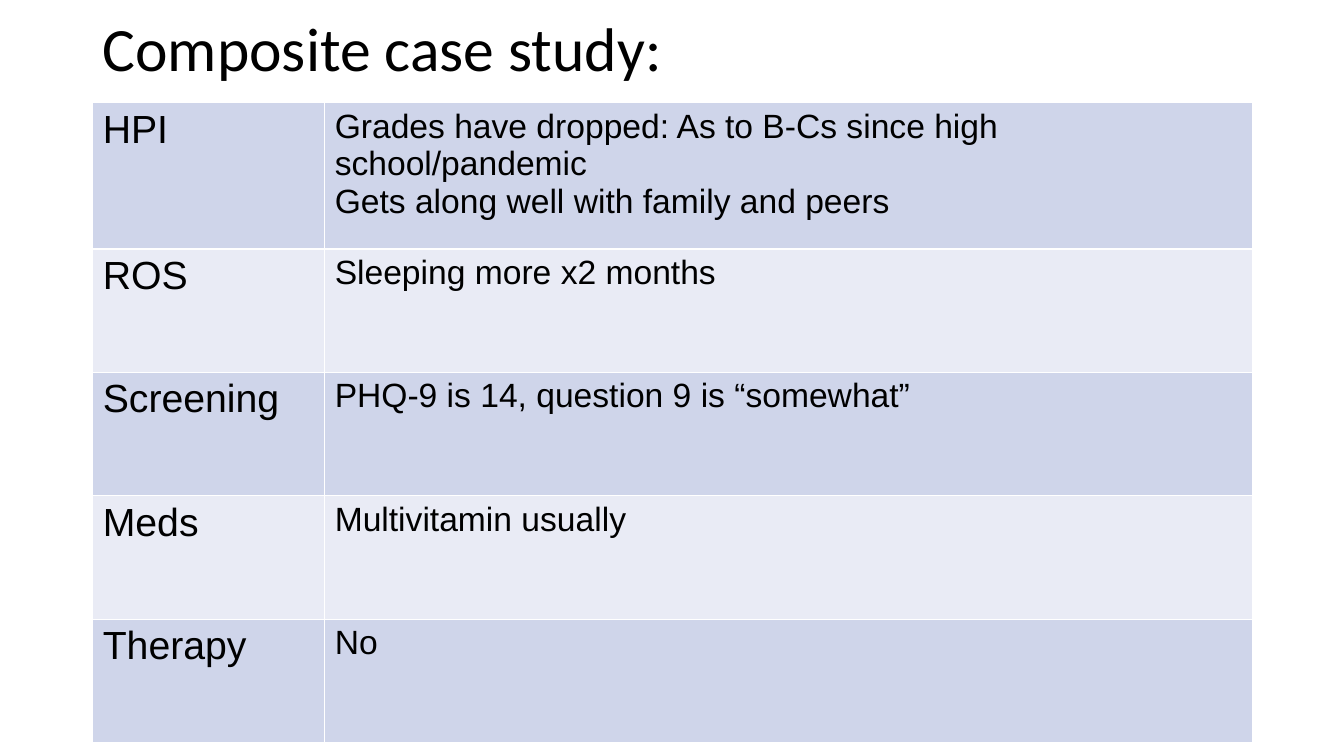
import pptx
import pptx.util
import pptx.dml.color
import pptx.enum.text
import pptx.oxml
import pptx.oxml.ns
from dataclasses import dataclass

Inches = pptx.util.Inches
Pt = pptx.util.Pt


@dataclass(frozen=True)
class Theme:
    text: str = "000000"
    bands: tuple = ("CFD5EA", "E9EBF5")
    border: str = "FFFFFF"
    border_pt: float = 1
    title_font: str = "Calibri"
    body_font: str = "Arial"
    title_size: float = 44
    label_size: float = 28
    detail_size: float = 24


THEME = Theme()
TITLE = "Composite case study:"
CASE = [
    ("HPI", ["Grades have dropped: As to B-Cs since high school/pandemic",
             "Gets along well with family and peers"]),
    ("ROS", ["Sleeping more x2 months"]),
    ("Screening", ["PHQ-9 is 14, question 9 is “somewhat”"]),
    ("Meds", ["Multivitamin usually"]),
    ("Therapy", ["No"]),
]


def rgb(value):
    return pptx.dml.color.RGBColor.from_string(value)


def add_run(p, text, font, size):
    r = p.add_run()
    r.text = text
    r.font.name = font
    r.font.size = Pt(size)
    r.font.bold = False
    r.font.color.rgb = rgb(THEME.text)


def set_borders(cell):
    tc_pr = cell._tc.get_or_add_tcPr()
    # Borders come before the fill in the cell properties
    for i, side in enumerate(("lnL", "lnR", "lnT", "lnB")):
        tc_pr.insert(i, pptx.oxml.parse_xml(
            f'<a:{side} {pptx.oxml.ns.nsdecls("a")} w="{Pt(THEME.border_pt)}">'
            f'<a:solidFill><a:srgbClr val="{THEME.border}"/></a:solidFill>'
            f'</a:{side}>'))


def fill_cell(cell, lines, size, color):
    cell.fill.solid()
    cell.fill.fore_color.rgb = rgb(color)
    set_borders(cell)
    tf = cell.text_frame
    for i, line in enumerate(lines):
        p = tf.add_paragraph() if i else tf.paragraphs[0]
        add_run(p, line, THEME.body_font, size)


def add_title(slide, left, top, width, height):
    box = slide.shapes.add_textbox(
        Inches(left), Inches(top), Inches(width), Inches(height))
    tf = box.text_frame
    tf.word_wrap = True
    tf.vertical_anchor = pptx.enum.text.MSO_ANCHOR.MIDDLE
    p = tf.paragraphs[0]
    p.line_spacing = 0.9
    add_run(p, TITLE, THEME.title_font, THEME.title_size)


def add_case_table(slide, left, top, width, height):
    frame = slide.shapes.add_table(
        len(CASE), 2, Inches(left), Inches(top), Inches(width), Inches(height))
    table = frame.table
    table.first_row = False
    table.horz_banding = False

    # One fifth for labels; the first row is taller, the others share the rest
    table.columns[0].width = Inches(width * 0.2)
    table.columns[1].width = Inches(width * 0.8)
    first = 1.45
    other = (height - first) / (len(CASE) - 1)

    for i, (label, details) in enumerate(CASE):
        table.rows[i].height = Inches(other if i else first)
        band = THEME.bands[i % 2]
        fill_cell(table.cell(i, 0), [label], THEME.label_size, band)
        fill_cell(table.cell(i, 1), details, THEME.detail_size, band)


def main():
    prs = pptx.Presentation()
    prs.slide_width = Inches(13.33)
    prs.slide_height = Inches(7.5)
    slide = prs.slides.add_slide(prs.slide_layouts[6])

    left, width, title_height = 0.92, 11.5, 1.02
    add_title(slide, left, 0, width, title_height)
    add_case_table(slide, left, title_height, width, 6.35)
    prs.save("out.pptx")


if __name__ == "__main__":
    main()
